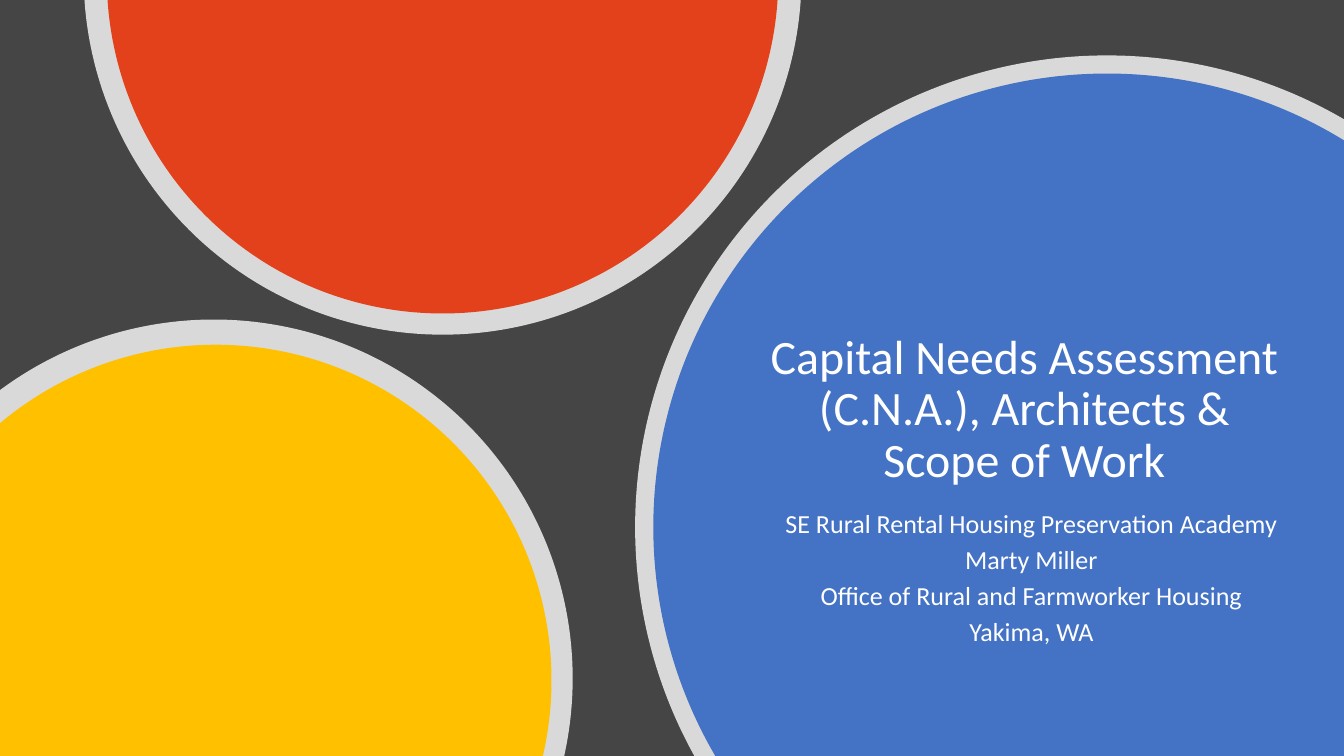
from itertools import product
from math import acos, asin, cos, degrees, hypot, pi, sin

from lxml.etree import SubElement
from pptx import Presentation
from pptx.dml.color import RGBColor
from pptx.enum.text import MSO_ANCHOR, MSO_AUTO_SIZE, PP_ALIGN
from pptx.oxml.ns import qn
from pptx.util import Inches, Pt

WIDTH, HEIGHT = 13.33, 7.5
WHITE = "FFFFFF"

# (ring centre x, y, radius), (disc centre x, y, radius), disc colour
CIRCLES = [
    ((4.39, -0.24, 3.56), (4.39, -0.22, 3.33), "E3411B"),
    ((2.12, 6.73, 3.56), (2.14, 6.75, 3.33), "FFC000"),
    ((10.98, 5.23, 4.68), (10.98, 5.23, 4.5), "4472C4"),
]
TITLE = "Capital Needs Assessment (C.N.A.), Architects & Scope of Work"
SUBTITLE = [
    "SE Rural Rental Housing Preservation Academy",
    "Marty Miller",
    "Office of Rural and Farmworker Housing",
    "Yakima, WA",
]


def rgb(color):
    return RGBColor.from_string(color)


def on_slide(x, y):
    gap = 0.0001
    return -gap <= x <= WIDTH + gap and -gap <= y <= HEIGHT + gap


def point_at(circle, angle):
    cx, cy, radius = circle
    return cx + radius * cos(angle), cy + radius * sin(angle)


def visible_arc(circle):
    """Return the start and end angles of the part of a circle on the slide."""
    cx, cy, radius = circle
    angles = []
    for x in (0, WIDTH):
        if abs(x - cx) < radius:
            turn = acos((x - cx) / radius)
            angles += [turn, 2 * pi - turn]
    for y in (0, HEIGHT):
        if abs(y - cy) < radius:
            turn = asin((y - cy) / radius)
            angles += [turn % (2 * pi), pi - turn]
    start, end = sorted(a for a in angles if on_slide(*point_at(circle, a)))
    if not on_slide(*point_at(circle, (start + end) / 2)):
        start, end = end, start + 2 * pi
    return start, end


def add_disc(slide, circle, color, alpha=None):
    """Draw a circle cut off at the slide's edges; alpha is in percent."""
    cx, cy, radius = circle
    left, right = max(cx - radius, 0), min(cx + radius, WIDTH)
    top, bottom = max(cy - radius, 0), min(cy + radius, HEIGHT)
    builder = slide.shapes.build_freeform(Inches(left), Inches(top))
    builder.add_line_segments([(Inches(right), Inches(top)),
                               (Inches(right), Inches(bottom)),
                               (Inches(left), Inches(bottom))])
    sp = builder.convert_to_shape()
    outline = sp._element.find(".//" + qn("a:path"))
    for step in list(outline):
        outline.remove(step)

    def add_point(tag, x, y):
        pt = SubElement(SubElement(outline, qn(tag)), qn("a:pt"))
        pt.set("x", str(Inches(x - left)))
        pt.set("y", str(Inches(y - top)))

    start, end = visible_arc(circle)
    add_point("a:moveTo", *point_at(circle, start))
    arc = SubElement(outline, qn("a:arcTo"))
    arc.set("wR", str(Inches(radius)))
    arc.set("hR", str(Inches(radius)))
    arc.set("stAng", str(round(degrees(start) * 60000)))
    arc.set("swAng", str(round(degrees(end - start) * 60000)))
    for x, y in product((0, WIDTH), (0, HEIGHT)):
        if hypot(x - cx, y - cy) < radius:
            add_point("a:lnTo", x, y)
    SubElement(outline, qn("a:close"))

    sp.shadow.inherit = False
    sp.line.fill.background()
    sp.fill.solid()
    sp.fill.fore_color.rgb = rgb(color)
    if alpha is not None:
        srgb = sp._element.spPr.find(qn("a:solidFill")).find(qn("a:srgbClr"))
        SubElement(srgb, qn("a:alpha")).set("val", str(alpha * 1000))


def fill_placeholder(sp, box, lines, size, spacing, before, anchor):
    sp.left, sp.top, sp.width, sp.height = (Inches(v) for v in box)
    tf = sp.text_frame
    tf.text = "\n".join(lines)
    tf.word_wrap = True
    tf.auto_size = MSO_AUTO_SIZE.NONE
    tf.vertical_anchor = anchor
    for p in tf.paragraphs:
        p.alignment = PP_ALIGN.CENTER
        p.line_spacing = spacing
        p.space_before = Pt(before)
        p.font.name = "Calibri"
        p.font.size = Pt(size)
        p.font.color.rgb = rgb(WHITE)


def add_title_slide(prs):
    slide = prs.slides.add_slide(prs.slide_layouts[0])
    slide.background.fill.solid()
    slide.background.fill.fore_color.rgb = rgb("454545")
    for ring, disc, color in CIRCLES:
        add_disc(slide, ring, WHITE, alpha=80)
        add_disc(slide, disc, color)
    title, subtitle = slide.shapes.title, slide.placeholders[1]
    fill_placeholder(title, (7.43, 2.77, 5.46, 2.12), [TITLE],
                     34.2, 0.9, 0, MSO_ANCHOR.BOTTOM)
    fill_placeholder(subtitle, (7.13, 5.07, 6.2, 1.43), SUBTITLE,
                     18.6, 0.7, 10, MSO_ANCHOR.TOP)
    # Bring the text in front of the circles
    for sp in (title, subtitle):
        slide.shapes._spTree.append(sp._element)


def main():
    prs = Presentation()
    prs.slide_width, prs.slide_height = Inches(WIDTH), Inches(HEIGHT)
    add_title_slide(prs)
    prs.save("out.pptx")


if __name__ == "__main__":
    main()
